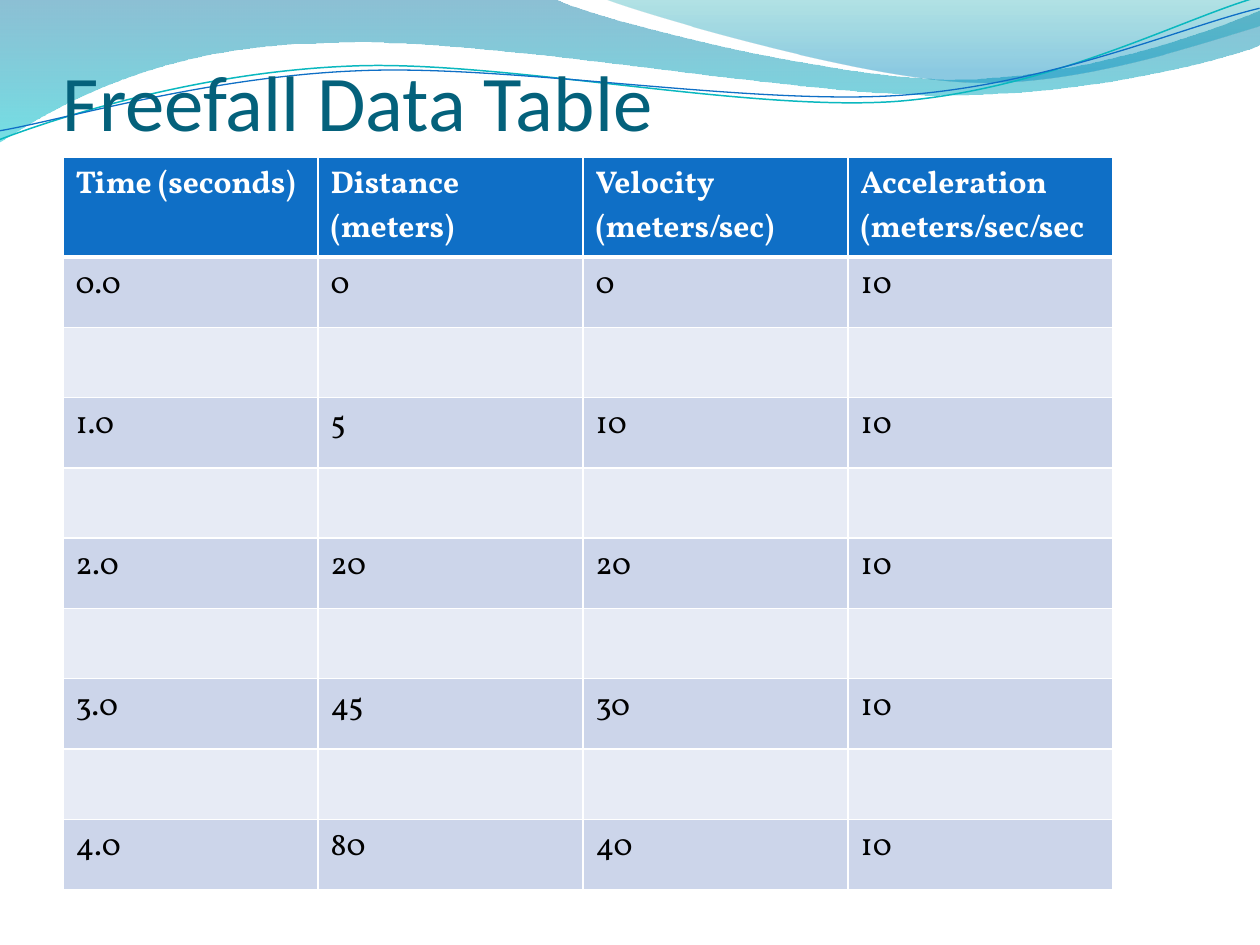
from dataclasses import dataclass
from lxml.etree import SubElement
from pptx import Presentation
from pptx.dml.color import RGBColor
from pptx.enum.text import MSO_ANCHOR
from pptx.oxml.ns import qn
from pptx.util import Emu, Pt

PX = 914400 / 126


@dataclass(frozen=True)
class Theme:
    """Colours, fonts and type sizes of the slide."""
    title: str = "04617B"
    header: str = "0F6FC6"
    band: str = "CCD5EA"
    plain: str = "E7EBF5"
    white: str = "FFFFFF"
    black: str = "000000"
    teal: str = "0AB8BF"
    wave: tuple = ((0, "0074A1", 45), (1, "00C6CF", 55))
    crest: tuple = ((0, "00A1A9", 30), (0.8, "008BBF", 45))
    title_font: str = "Calibri"
    body_font: str = "Vollkorn"
    title_size: int = 45
    body_size: int = 18


T = Theme()

WAVE = [(0, 0), (554, -1), (600, 21, 837, 79, 955, 79),
        (1075, 79, 1207, 33, 1260, 11), (1261, 45),
        (1239, 55, 1096, 96, 940, 95), (784, 95, 481, 35, 324, 43),
        (161, 45, 58, 105, -1, 142), (0, 0)]
CREST = [(604, -1), (641, 14, 859, 78, 969, 82),
         (1079, 87, 1211, 40, 1260, 26), (1260, 0), (604, -1)]
TEAL_LINE = [(-3, 110), (58, 90, 199, 52, 350, 53),
             (499, 53, 745, 118, 896, 114), (1049, 109, 1184, 45, 1260, 27)]
BLUE_LINE = [(-2, 101), (57, 94, 207, 57, 357, 58),
             (509, 58, 750, 112, 902, 108), (1052, 104, 1187, 52, 1262, 38)]
LINE_ROTATION = -2.7

COLUMNS = [255, 265, 265, 265]
HEADER_HEIGHT, BODY_HEIGHT = 100, 633
HEADINGS = ["Time (seconds)", "Distance (meters)", "Velocity (meters/sec)",
            "Acceleration (meters/sec/sec"]
READINGS = [["0.0", "0", "0", "10"], ["1.0", "5", "10", "10"],
            ["2.0", "20", "20", "10"], ["3.0", "45", "30", "10"],
            ["4.0", "80", "40", "10"]]


def px(n):
    """Turn pixels into EMU."""
    return Emu(round(n * PX))


def rgb(color):
    """Turn a hex string into a colour."""
    return RGBColor.from_string(color)


def add_outline(s, path, close):
    """Add a freeform whose six-number segments are cubic curves."""
    points = [(px(seg[i]), px(seg[i + 1]))
              for seg in path for i in range(0, len(seg), 2)]
    builder = s.shapes.build_freeform(*points[0], scale=1.0)
    builder.add_line_segments(points[1:], close=close)
    sp = builder.convert_to_shape()
    sp.shadow.inherit = False
    nodes = iter(list(sp._element.spPr.iter(qn("a:lnTo"))))
    for segment in path[1:]:
        node = next(nodes)
        if len(segment) == 6:
            curve = node.makeelement(qn("a:cubicBezTo"))
            node.addprevious(curve)
            for part in (node, next(nodes), next(nodes)):
                curve.append(part[0])
                part.getparent().remove(part)
    return sp


def add_wave(s, path, stops):
    """Add a closed wave with a translucent vertical gradient."""
    sp = add_outline(s, path, True)
    sp.line.fill.background()
    sp.fill.gradient()
    sp.fill.gradient_angle = 270
    for stop, (position, color, _) in zip(sp.fill.gradient_stops, stops):
        stop.position = position
        stop.color.rgb = rgb(color)
    colors = sp._element.spPr.iter(qn("a:srgbClr"))
    for node, (_, _, opacity) in zip(colors, stops):
        SubElement(node, qn("a:alpha"), val=str(opacity * 1000))


def add_curve(s, path, color, width):
    """Add an open, slightly turned curved line."""
    sp = add_outline(s, path, False)
    sp.rotation = LINE_ROTATION
    sp.fill.background()
    sp.line.color.rgb = rgb(color)
    sp.line.width = Pt(width)


def style_text(p, font, size, color, bold=False):
    """Format the runs of a paragraph."""
    for r in p.runs:
        r.font.name = font
        r.font.size = Pt(size)
        r.font.bold = bold
        r.font.color.rgb = rgb(color)


def add_title(s, text):
    """Add the slide title."""
    tf = s.shapes.add_textbox(px(63), px(53), px(1134), px(94)).text_frame
    tf.word_wrap = True
    tf.vertical_anchor = MSO_ANCHOR.BOTTOM
    tf.margin_left = tf.margin_right = tf.margin_bottom = 0
    tf.text = text
    style_text(tf.paragraphs[0], T.title_font, T.title_size, T.title)


def set_borders(cell, bottom):
    """Draw white borders around a cell."""
    tcPr = cell._tc.get_or_add_tcPr()
    for side, width in (("L", 1), ("R", 1), ("T", 1), ("B", bottom)):
        ln = SubElement(tcPr, qn(f"a:ln{side}"), w=str(Pt(width)))
        fill = SubElement(ln, qn("a:solidFill"))
        SubElement(fill, qn("a:srgbClr"), val=T.white)


def fill_row(row, values, fill, color, header=False):
    """Write and format one table row."""
    for cell, value in zip(row.cells, values):
        if value:
            cell.text = value
        style_text(cell.text_frame.paragraphs[0], T.body_font, T.body_size,
                   color, header)
        set_borders(cell, 3 if header else 1)
        cell.fill.solid()
        cell.fill.fore_color.rgb = rgb(fill)


def add_data_table(s):
    """Add the readings with an empty row between each pair."""
    count = 2 * len(READINGS)
    table = s.shapes.add_table(count, len(COLUMNS), px(63), px(157),
                               px(sum(COLUMNS)),
                               px(HEADER_HEIGHT + BODY_HEIGHT)).table
    for column, width in zip(table.columns, COLUMNS):
        column.width = px(width)
    for i, row in enumerate(table.rows):
        if i == 0:
            row.height = px(HEADER_HEIGHT)
            fill_row(row, HEADINGS, T.header, T.white, True)
            continue
        row.height = px(BODY_HEIGHT / (count - 1))
        if i % 2:
            fill_row(row, READINGS[i // 2], T.band, T.black)
        else:
            fill_row(row, [""] * len(COLUMNS), T.plain, T.black)


def main():
    """Build the slide and save it."""
    prs = Presentation()
    prs.slide_width, prs.slide_height = px(1260), px(945)
    s = prs.slides.add_slide(prs.slide_layouts[6])
    add_wave(s, WAVE, T.wave)
    add_wave(s, CREST, T.crest)
    add_curve(s, TEAL_LINE, T.teal, 0.85)
    add_curve(s, BLUE_LINE, T.header, 0.75)
    add_title(s, "Freefall Data Table")
    add_data_table(s)
    prs.save("out.pptx")


if __name__ == "__main__":
    main()
